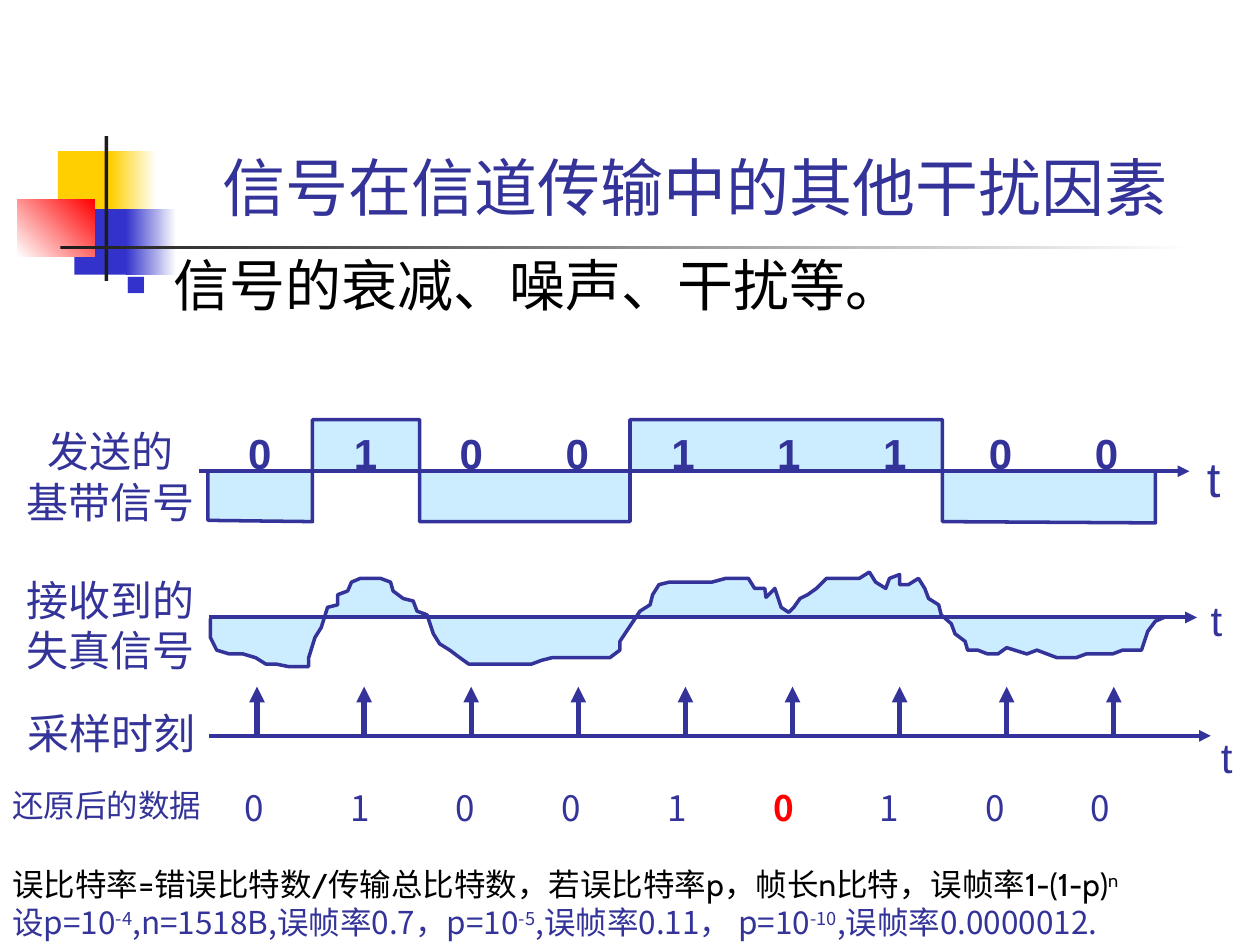
from lxml import etree
from pptx import Presentation
from pptx import util as u
from pptx.dml.color import RGBColor
from pptx.enum import shapes, text
from pptx.oxml import ns

NAVY = RGBColor(0x33, 0x33, 0x99)
BLUE = RGBColor(0x33, 0x33, 0xCC)
YELLOW = RGBColor(0xFF, 0xCF, 0x01)
RED = RGBColor(0xFF, 0x00, 0x00)
WHITE = RGBColor(0xFF, 0xFF, 0xFF)
BLACK = RGBColor(0x00, 0x00, 0x00)
CHARCOAL = RGBColor(0x1C, 0x1C, 0x1C)
PALE_BLUE = RGBColor(0xCC, 0xEC, 0xFF)
LATIN, SANS, CJK = "Cabin", "Arial", "Noto Sans CJK SC"

SENT_BITS = "010011100"
RESTORED_BITS = "010010100"
BIT_PITCH, SAMPLE_PITCH = 0.84, 0.85

SENT_WAVE = [
    (1.65, 3.74), (1.65, 4.13), (2.48, 4.14), (2.48, 3.33), (3.33, 3.33), (3.33, 4.14),
    (5, 4.14), (5, 3.33), (7.48, 3.33), (7.48, 4.14), (9.17, 4.15), (9.17, 3.74)]
RECEIVED_WAVE = [
    (1.67, 4.91), (1.67, 5.06), (1.72, 5.16), (1.82, 5.19), (1.93, 5.19), (2.03, 5.22),
    (2.11, 5.27), (2.19, 5.27), (2.29, 5.29), (2.45, 5.29), (2.45, 5.22), (2.5, 5.06),
    (2.55, 4.98), (2.6, 4.82), (2.68, 4.8), (2.68, 4.72), (2.76, 4.69), (2.79, 4.62),
    (2.86, 4.59), (3.02, 4.59), (3.1, 4.62), (3.12, 4.69), (3.2, 4.75), (3.28, 4.77),
    (3.31, 4.85), (3.39, 4.88), (3.44, 5.03), (3.49, 5.11), (3.57, 5.16), (3.65, 5.22),
    (3.72, 5.27), (4.22, 5.27), (4.3, 5.24), (4.38, 5.22), (4.84, 5.22), (4.92, 5.16),
    (4.92, 5.09), (5.08, 4.85), (5.16, 4.8), (5.18, 4.72), (5.23, 4.64), (5.31, 4.62),
    (5.65, 4.62), (5.76, 4.59), (5.94, 4.59), (5.99, 4.67), (6.07, 4.67), (6.08, 4.74),
    (6.15, 4.67), (6.2, 4.82), (6.26, 4.86), (6.3, 4.82), (6.35, 4.75), (6.41, 4.72),
    (6.48, 4.67), (6.56, 4.59), (6.82, 4.59), (6.9, 4.54), (6.95, 4.62), (7.03, 4.67),
    (7.06, 4.59), (7.14, 4.56), (7.14, 4.64), (7.21, 4.64), (7.29, 4.59), (7.34, 4.67),
    (7.37, 4.75), (7.45, 4.8), (7.47, 4.88), (7.55, 4.95), (7.58, 5.03), (7.66, 5.09),
    (7.68, 5.16), (7.76, 5.16), (7.84, 5.19), (7.92, 5.19), (7.99, 5.14), (8.15, 5.19),
    (8.23, 5.16), (8.39, 5.22), (8.54, 5.22), (8.62, 5.19), (8.83, 5.19), (8.91, 5.16),
    (9.06, 5.16), (9.11, 5.01), (9.17, 4.93), (9.24, 4.9)]


class SignalSlide:
    """Draws on one slide with a shared style."""

    def __init__(self, slide):
        self.slide = slide
        self.shapes = slide.shapes

    def run(self, paragraph, words, size, font=CJK, color=NAVY, bold=False, raised=False):
        run = paragraph.add_run()
        run.text = words
        run.font.size = u.Pt(size)
        run.font.name = font
        run.font.bold = bold
        run.font.color.rgb = color
        properties = run.font._element
        etree.SubElement(properties, ns.qn("a:ea"), typeface=CJK)
        if raised:
            properties.set("baseline", "30000")

    def title(self, words):
        title = self.shapes.title
        title.left, title.top = u.Inches(1.26), u.Inches(0.23)
        title.width, title.height = u.Inches(8.52), u.Inches(1.6)
        title.text_frame.vertical_anchor = text.MSO_ANCHOR.BOTTOM
        paragraph = title.text_frame.paragraphs[0]
        paragraph.alignment = text.PP_ALIGN.CENTER
        self.run(paragraph, words, 36, LATIN)

    def block(self, left, top, width, height, color, fade_to=None, angle=0):
        block = self.shapes.add_shape(
            shapes.MSO_SHAPE.RECTANGLE, *map(u.Inches, (left, top, width, height)))
        block.shadow.inherit = False
        block.line.fill.background()
        if fade_to is None:
            block.fill.solid()
            block.fill.fore_color.rgb = color
        else:
            block.fill.gradient()
            block.fill.gradient_angle = angle
            for stop, shade in zip(block.fill.gradient_stops, (color, fade_to)):
                stop.color.rgb = shade

    def frame(self, left, top, width, height, wrap=False):
        box = self.shapes.add_textbox(*map(u.Inches, (left, top, width, height)))
        box.text_frame.word_wrap = wrap
        return box.text_frame

    def label(self, left, top, width, height, lines, size, centred=False, **style):
        frame = self.frame(left, top, width, height)
        for index, words in enumerate(lines):
            paragraph = frame.add_paragraph() if index else frame.paragraphs[0]
            if centred:
                paragraph.alignment = text.PP_ALIGN.CENTER
            self.run(paragraph, words, size, **style)

    def bullet(self, left, top, width, height, words):
        paragraph = self.frame(left, top, width, height, wrap=True).paragraphs[0]
        paragraph.space_before = u.Pt(6)
        self.run(paragraph, words, 32, LATIN, BLACK)
        properties = paragraph._p.get_or_add_pPr()
        indent = u.Inches(0.38)
        properties.set("marL", str(indent))
        properties.set("indent", str(-indent))
        marker_color = etree.SubElement(properties, ns.qn("a:buClr"))
        etree.SubElement(marker_color, ns.qn("a:srgbClr"), val=str(BLUE))
        etree.SubElement(properties, ns.qn("a:buSzPct"), val="60000")
        etree.SubElement(properties, ns.qn("a:buFont"), typeface=SANS)
        etree.SubElement(properties, ns.qn("a:buChar"), char="■")

    def arrow(self, start, end, weight=2.25):
        arrow = self.shapes.add_connector(
            shapes.MSO_CONNECTOR.STRAIGHT, *map(u.Inches, (*start, *end)))
        arrow.line.color.rgb = NAVY
        arrow.line.width = u.Pt(weight)
        etree.SubElement(arrow.line._get_or_add_ln(), ns.qn("a:tailEnd"), type="triangle")
        etree.SubElement(arrow._element.spPr, ns.qn("a:effectLst"))

    def wave(self, points):
        first, *rest = [(u.Inches(x), u.Inches(y)) for x, y in points]
        builder = self.shapes.build_freeform(*first)
        builder.add_line_segments(rest, close=False)
        wave = builder.convert_to_shape()
        wave.shadow.inherit = False
        wave.fill.solid()
        wave.fill.fore_color.rgb = PALE_BLUE
        wave.line.color.rgb = NAVY
        wave.line.width = u.Pt(2)


def draw_ornament(page):
    page.block(0.46, 1.2, 0.48, 0.52, YELLOW)
    page.block(0.88, 1.2, 0.36, 0.52, YELLOW, WHITE)
    page.block(0.59, 1.66, 0.46, 0.52, BLUE)
    page.block(1, 1.66, 0.4, 0.52, BLUE, WHITE)
    page.block(0.14, 1.58, 0.61, 0.46, WHITE, RED, angle=45)
    page.block(0.83, 1.08, 0.03, 1.15, CHARCOAL)
    page.block(0.48, 1.95, 9, 0.03, CHARCOAL, WHITE)


def draw_signals(page):
    page.wave(RECEIVED_WAVE)
    page.label(9.51, 4.67, 0.29, 0.5, ["t"], 24, font=SANS)
    page.label(0.11, 4.51, 1.53, 0.9, ["接收到的", "失真信号"], 24, centred=True)
    page.arrow((1.66, 4.9), (9.5, 4.9))

    page.wave(SENT_WAVE)
    for index, bit in enumerate(SENT_BITS):
        page.label(1.87 + index * BIT_PITCH, 3.34, 0.38, 0.5, [bit], 24, font=SANS, bold=True)
    page.label(9.48, 3.51, 0.31, 0.56, ["t"], 28, font=SANS)
    page.label(0.11, 3.33, 1.53, 0.9, ["发送的", "基带信号"], 24, centred=True)
    page.arrow((1.58, 3.74), (9.44, 3.74))


def draw_sampling(page):
    for index, (sent, restored) in enumerate(zip(SENT_BITS, RESTORED_BITS)):
        wrong = sent != restored
        page.label(1.84 + index * BIT_PITCH, 6.19, 0.34, 0.43, [restored], 20,
                   color=RED if wrong else NAVY, bold=wrong)
        sample_x = 2.04 + index * SAMPLE_PITCH
        page.arrow((sample_x, 5.85), (sample_x, 5.45), weight=3)
    page.label(0, 6.19, 1.73, 0.4, ["还原后的数据"], 18)
    page.arrow((1.66, 5.84), (9.61, 5.84))
    page.label(9.59, 5.76, 0.29, 0.5, ["t"], 24, font=SANS)
    page.label(0.12, 5.57, 1.53, 0.5, ["采样时刻"], 24)


def write_error_rates(page):
    frame = page.frame(0, 6.82, 9.72, 0.7, wrap=True)
    formula = frame.paragraphs[0]
    page.run(formula, "误比特率=错误比特数/传输总比特数，若误比特率p，帧长n比特，误帧率1-(1-p)",
             18, LATIN, BLACK)
    page.run(formula, "n", 18, LATIN, BLACK, raised=True)
    example = frame.add_paragraph()
    pieces = ["设p=10", "-4", ",n=1518B,误帧率0.7，p=10", "-5",
              ",误帧率0.11， p=10", "-10", ",误帧率0.0000012."]
    for index, words in enumerate(pieces):
        page.run(example, words, 18, raised=index % 2 == 1)


def main():
    deck = Presentation()
    deck.slide_width, deck.slide_height = u.Inches(10), u.Inches(7.5)
    page = SignalSlide(deck.slides.add_slide(deck.slide_layouts[5]))
    draw_ornament(page)
    page.title("信号在信道传输中的其他干扰因素")
    page.bullet(0.9, 1.94, 8.74, 0.79, "信号的衰减、噪声、干扰等。")
    draw_signals(page)
    draw_sampling(page)
    write_error_rates(page)
    deck.save("out.pptx")


if __name__ == "__main__":
    main()
